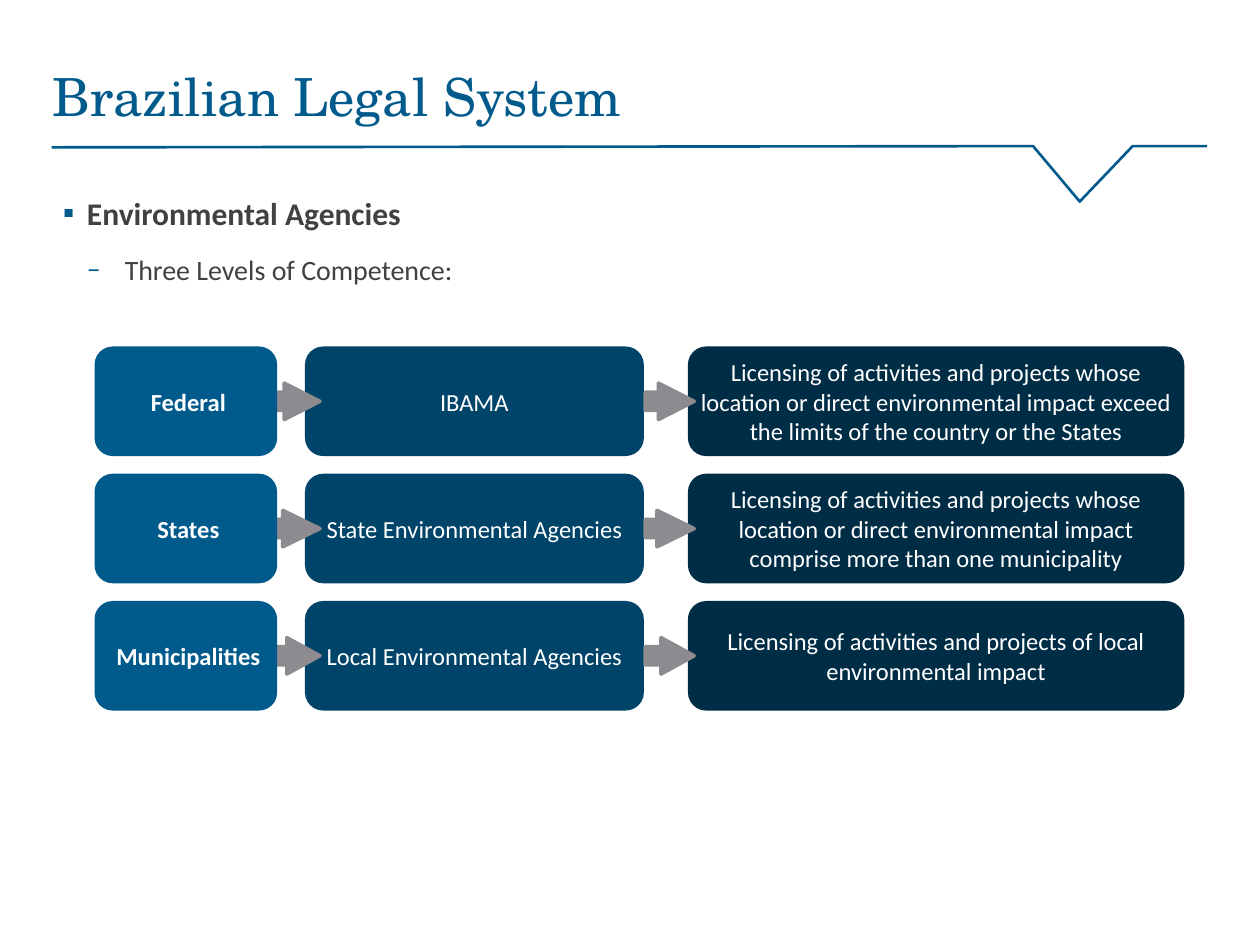
from lxml.etree import SubElement
from pptx import Presentation
from pptx.dml.color import RGBColor
from pptx.enum.shapes import MSO_SHAPE as Preset
from pptx.enum.text import MSO_ANCHOR as Anchor, PP_ALIGN as Align
from pptx.oxml.ns import qn
from pptx.util import Inches, Pt

BLUE, NAVY, DARK = "005A8C", "004469", "002D46"
GREY, TEXT, WHITE = "8D8B8F", "414042", "FFFFFF"

TITLE = "Brazilian Legal System"
RULE = [(9.58, 1.16), (8.99, 1.16), (8.57, 1.6), (8.2, 1.16), (0.41, 1.17)]
BULLETS = [
    dict(text="Environmental Agencies", size=18, bold=True, mark="▪",
         indent=(0.19, -0.19), spacing=0.8, after=12),
    dict(text="Three Levels of Competence:", size=16, bold=False, mark="–",
         indent=(0.49, -0.3), spacing=Pt(19), after=6),
]
ROWS = [
    ("Federal", "IBAMA",
     "Licensing of activities and projects whose location or direct "
     "environmental impact exceed the limits of the country or the States"),
    ("States", "State Environmental Agencies",
     "Licensing of activities and projects whose location or direct "
     "environmental impact comprise more than one municipality"),
    ("Municipalities", "Local Environmental Agencies",
     "Licensing of activities and projects of local environmental impact"),
]
LEVEL = dict(left=0.75, width=1.45, color=BLUE, bold=True, margins=(0.08, 0.05, 0.04, 0.05))
AGENCY = dict(left=2.42, width=2.69, color=NAVY, bold=False, margins=(0, 0.04, 0, 0.04))
SCOPE = dict(left=5.46, width=3.94, color=DARK, bold=False, margins=(0, 0.04, 0, 0.04))
ARROW_LEFTS = (2.15, 5.12)
ARROW_HEADS = (0.98, 1.02, 0.91)
FIRST_TOP, ROW_STEP, BOX_HEIGHT = 2.75, 1.01, 0.87
ARROW_WIDTH, ARROW_HEIGHT = 0.39, 0.29


def rgb(color):
    """Turn a hex string into a colour."""
    return RGBColor.from_string(color)


def set_frame(frame, margins, anchor):
    """Set wrapping, margins and anchor of a text frame."""
    frame.word_wrap = True
    frame.margin_left, frame.margin_top, frame.margin_right, frame.margin_bottom = map(Inches, margins)
    frame.vertical_anchor = anchor


def add_span(para, text, font, size, color, bold=False):
    """Add a formatted run to a paragraph."""
    span = para.add_run()
    span.text = text
    span.font.name, span.font.size, span.font.bold = font, Pt(size), bold
    span.font.color.rgb = rgb(color)


def add_bullet(para, mark, indent):
    """Give a paragraph a coloured bullet and a hanging indent."""
    props = para._p.get_or_add_pPr()
    props.set("marL", str(Inches(indent[0])))
    props.set("indent", str(Inches(indent[1])))
    color = SubElement(props, qn("a:buClr"))
    SubElement(color, qn("a:srgbClr"), val=BLUE)
    SubElement(props, qn("a:buFont"), typeface="Calibri")
    SubElement(props, qn("a:buChar"), char=mark)


def add_preset(page, preset, left, top, width, height, color):
    """Add a flat filled shape without outline."""
    shape = page.shapes.add_shape(preset, *map(Inches, (left, top, width, height)))
    shape.shadow.inherit = False
    shape.fill.solid()
    shape.fill.fore_color.rgb = rgb(color)
    shape.line.fill.background()
    return shape


def add_box(page, column, row, text):
    """Add one rounded box of the grid."""
    box = add_preset(page, Preset.ROUNDED_RECTANGLE, column["left"], FIRST_TOP + row * ROW_STEP,
                     column["width"], BOX_HEIGHT, column["color"])
    set_frame(box.text_frame, column["margins"], Anchor.MIDDLE)
    para = box.text_frame.paragraphs[0]
    para.alignment = Align.CENTER
    add_span(para, text, "Calibri", 14, WHITE, column["bold"])


def add_arrow(page, left, row):
    """Add one arrow centred on a row."""
    top = FIRST_TOP + row * ROW_STEP + (BOX_HEIGHT - ARROW_HEIGHT) / 2
    arrow = add_preset(page, Preset.RIGHT_ARROW, left, top, ARROW_WIDTH, ARROW_HEIGHT, GREY)
    arrow.adjustments[0], arrow.adjustments[1] = 0.5, ARROW_HEADS[row]
    arrow.line.color.rgb = rgb(GREY)
    arrow.line.width = Pt(2)


def add_rule(page):
    """Draw the notched line under the title."""
    points = [(Inches(x), Inches(y)) for x, y in RULE]
    builder = page.shapes.build_freeform(*points[0])
    builder.add_line_segments(points[1:], close=False)
    rule = builder.convert_to_shape()
    rule.shadow.inherit = False
    rule.fill.solid()
    rule.fill.fore_color.rgb = rgb(WHITE)
    rule.line.color.rgb = rgb(BLUE)
    rule.line.width = Pt(1.5)


def add_title(page):
    """Place and format the title."""
    title = page.shapes.title
    title.left, title.top, title.width, title.height = map(Inches, (0.42, 0.51, 8.74, 0.88))
    set_frame(title.text_frame, (0, 0, 0, 0), Anchor.TOP)
    para = title.text_frame.paragraphs[0]
    para.alignment = Align.LEFT
    add_span(para, TITLE, "TeX Gyre Schola", 30, BLUE)


def add_bullets(page):
    """Add the two-level list."""
    box = page.shapes.add_textbox(*map(Inches, (0.5, 1.6, 8.92, 1.13)))
    frame = box.text_frame
    set_frame(frame, (0, 0, 0, 0), Anchor.TOP)
    for level, item in enumerate(BULLETS):
        para = frame.add_paragraph() if level else frame.paragraphs[0]
        add_bullet(para, item["mark"], item["indent"])
        para.level, para.alignment = level, Align.JUSTIFY
        para.line_spacing, para.space_after = item["spacing"], Pt(item["after"])
        add_span(para, item["text"], "Calibri", item["size"], TEXT, item["bold"])


def main():
    """Build the slide and save it."""
    deck = Presentation()
    deck.slide_width, deck.slide_height = Inches(10), Inches(7.5)
    page = deck.slides.add_slide(deck.slide_layouts[5])
    add_rule(page)
    add_title(page)
    add_bullets(page)
    for row, (level, agency, scope) in enumerate(ROWS):
        add_box(page, AGENCY, row, agency)
        add_box(page, SCOPE, row, scope)
        for left in ARROW_LEFTS:
            add_arrow(page, left, row)
        add_box(page, LEVEL, row, level)
    deck.save("out.pptx")


if __name__ == "__main__":
    main()
